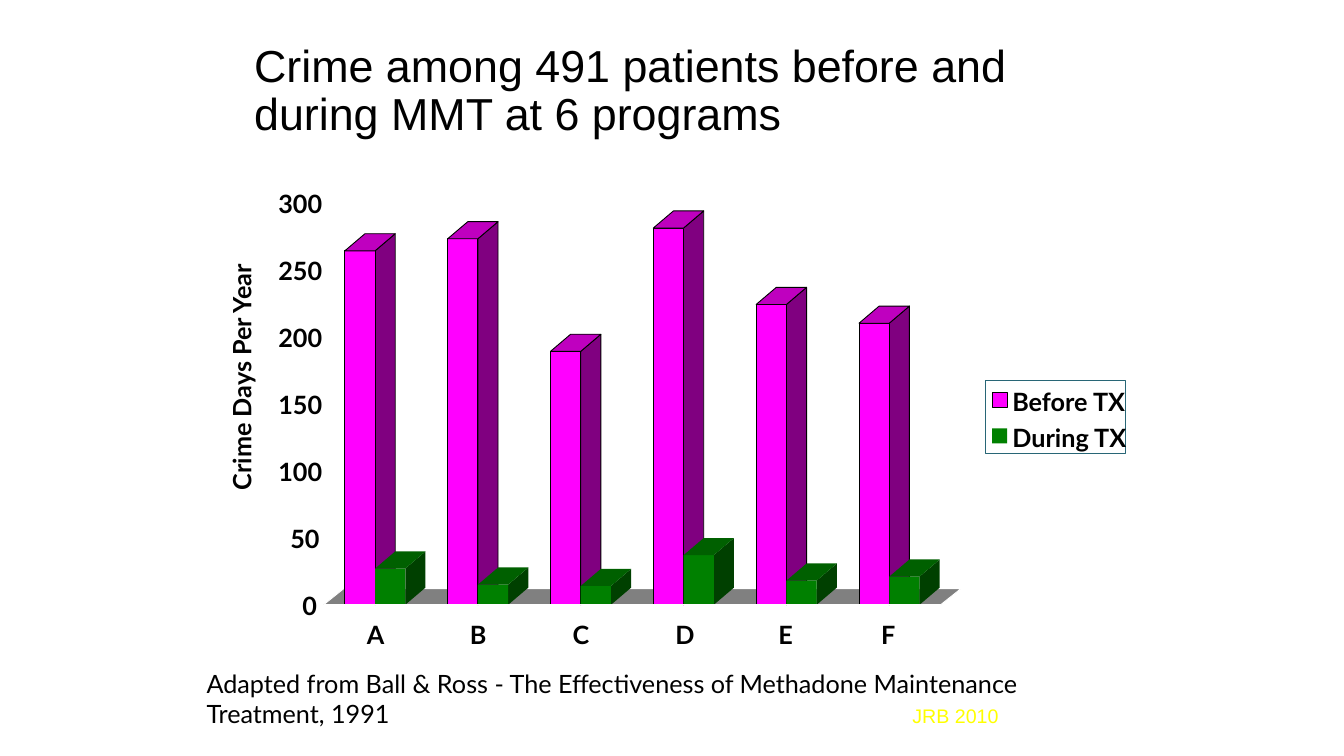
import pptx
import pptx.util
import pptx.dml.color
import pptx.enum.shapes
import pptx.enum.text
import pptx.oxml.ns
import lxml.etree
from dataclasses import dataclass

Inches = pptx.util.Inches
Pt = pptx.util.Pt
Align = pptx.enum.text.PP_ALIGN
Anchor = pptx.enum.text.MSO_ANCHOR
AutoSize = pptx.enum.text.MSO_AUTO_SIZE


@dataclass(frozen=True)
class Theme:
    heading: str = "Arial"
    body: str = "Lato"
    title_size: int = 32
    text_size: int = 18
    credit_size: int = 14
    hairline: float = 0.63
    black: str = "000000"
    white: str = "FFFFFF"
    yellow: str = "FFFF00"
    floor: str = "808080"
    legend: str = "286676"
    before: tuple = ("FF00FF", "800080", "BF00BF")
    during: tuple = ("008000", "004000", "006000")


def rgb(value):
    return pptx.dml.color.RGBColor.from_string(value)


def add_text(p, text, font, size, color, bold=False):
    r = p.add_run()
    r.text = text
    r.font.name = font
    r.font.size = Pt(size)
    r.font.bold = bold
    r.font.color.rgb = rgb(color)


class SlideBuilder:
    def __init__(self, slide, theme):
        self.slide = slide
        self.theme = theme
        self.shapes = slide.shapes

    def start_group(self):
        self.shapes = self.slide.shapes.add_group_shape().shapes

    def style(self, sp, fill=None, line=None):
        sp.shadow.inherit = False
        if fill:
            sp.fill.solid()
            sp.fill.fore_color.rgb = rgb(fill)
        else:
            sp.fill.background()
        if line:
            sp.line.color.rgb = rgb(line)
            sp.line.width = Pt(self.theme.hairline)
        else:
            sp.line.fill.background()

    def title(self, text, x, y, w, h):
        sp = self.slide.shapes.title
        sp.left, sp.top, sp.width, sp.height = map(Inches, (x, y, w, h))
        tf = sp.text_frame
        tf.auto_size = AutoSize.NONE
        tf.vertical_anchor = Anchor.MIDDLE
        p = tf.paragraphs[0]
        p.alignment = Align.LEFT
        p.line_spacing = 0.9
        add_text(p, text, self.theme.heading, self.theme.title_size, self.theme.black)

    def text_box(self, x, y, w, h, rotation=0):
        sp = self.shapes.add_textbox(*map(Inches, (x, y, w, h)))
        sp.rotation = rotation
        sp.text_frame.word_wrap = True
        return sp.text_frame

    def label(self, text, x, y, w):
        tf = self.text_box(x, y, w, 0.3)
        tf.word_wrap = False
        tf.auto_size = AutoSize.SHAPE_TO_FIT_TEXT
        tf.margin_left = tf.margin_right = tf.margin_top = tf.margin_bottom = 0
        add_text(tf.paragraphs[0], text, self.theme.body, self.theme.text_size,
                 self.theme.black, bold=True)

    def rect(self, x, y, w, h, fill=None, line=None):
        kind = pptx.enum.shapes.MSO_SHAPE.RECTANGLE
        sp = self.shapes.add_shape(kind, *map(Inches, (x, y, w, h)))
        self.style(sp, fill, line)

    def polygon(self, points, fill, line=None):
        points = [(Inches(x), Inches(y)) for x, y in points]
        builder = self.shapes.build_freeform(*points[0])
        builder.add_line_segments(points[1:], close=True)
        self.style(builder.convert_to_shape(), fill, line)

    def line(self, x1, y1, x2, y2, color):
        kind = pptx.enum.shapes.MSO_CONNECTOR.STRAIGHT
        sp = self.shapes.add_connector(kind, *map(Inches, (x1, y1, x2, y2)))
        sp.line.color.rgb = rgb(color)
        sp.line.width = Pt(self.theme.hairline)
        sp_pr = sp._element.spPr
        lxml.etree.SubElement(sp_pr, pptx.oxml.ns.qn("a:effectLst"))

    def bar(self, x, base, w, h, colors, line=None):
        dx, dy = 0.2, 0.17
        front, side, cap = colors
        top, right = base - h, x + w
        self.polygon([(right, base), (right, top), (right + dx, top - dy),
                      (right + dx, base - dy)], side, line)
        self.rect(x, top, w, h, front, line)
        self.polygon([(right, top), (right + dx, top - dy), (x + dx, top - dy),
                      (x, top)], cap, line)


def add_tab_stop(p, position):
    p_pr = p._p.get_or_add_pPr()
    tabs = lxml.etree.SubElement(p_pr, pptx.oxml.ns.qn("a:tabLst"))
    tab = lxml.etree.SubElement(tabs, pptx.oxml.ns.qn("a:tab"))
    tab.set("pos", str(position))
    tab.set("algn", "l")


def draw_chart(page):
    theme = page.theme
    left, right, base, height, peak = 3.21, 9.33, 6, 3.99, 300
    programs = {"A": (264, 27), "B": (273, 15), "C": (189, 14),
                "D": (281, 37), "E": (224, 18), "F": (210, 21)}
    step = (right - left) / len(programs)
    bar_width = 0.3

    page.start_group()
    page.polygon([(left, base), (left + 0.2, base - 0.16),
                  (right + 0.2, base - 0.16), (right, base)], theme.floor, theme.white)
    for i, (name, (before, during)) in enumerate(programs.items()):
        x = left + 0.21 + i * step
        page.bar(x, base, bar_width, before / peak * height, theme.before, theme.black)
        page.bar(x + bar_width, base, bar_width, during / peak * height, theme.during)
        page.label(name, x + 0.22, 6.14, 0.17)
    page.line(left, base, right, base, theme.white)
    for value in range(0, peak + 1, 50):
        text = str(value)
        y = base - 0.14 - value / peak * height
        page.label(text, 3.12 - 0.12 * len(text), y, 0.16 * len(text))

    page.rect(9.77, 3.77, 1.39, 0.73, line=theme.legend)
    entries = (("Before TX", theme.before, theme.black), ("During TX", theme.during, None))
    for i, (name, colors, outline) in enumerate(entries):
        y = 3.83 + i * 0.36
        page.rect(9.84, y + 0.06, 0.15, 0.15, colors[0], outline)
        page.label(name, 10.04, y, 1.25)


def main():
    theme = Theme()
    prs = pptx.Presentation()
    prs.slide_width, prs.slide_height = Inches(13.33), Inches(7.5)
    page = SlideBuilder(prs.slides.add_slide(prs.slide_layouts[5]), theme)

    page.title("Crime among 491 patients before and during MMT at 6 programs",
               2.42, 0.21, 8.5, 1.4)

    p = page.text_box(1.95, 6.58, 9.22, 0.71).paragraphs[0]
    add_tab_stop(p, Inches(7))
    add_text(p, "Adapted from Ball & Ross - The Effectiveness of Methadone "
             "Maintenance Treatment, 1991\t", theme.body, theme.text_size, theme.black)
    add_text(p, "JRB 2010", theme.heading, theme.credit_size, theme.yellow)

    p = page.text_box(-0.28, 3.54, 5.35, 0.4, rotation=270).paragraphs[0]
    p.alignment = Align.CENTER
    add_text(p, "Crime Days Per Year", theme.body, theme.text_size, theme.black, bold=True)

    draw_chart(page)
    prs.save("out.pptx")


if __name__ == "__main__":
    main()
